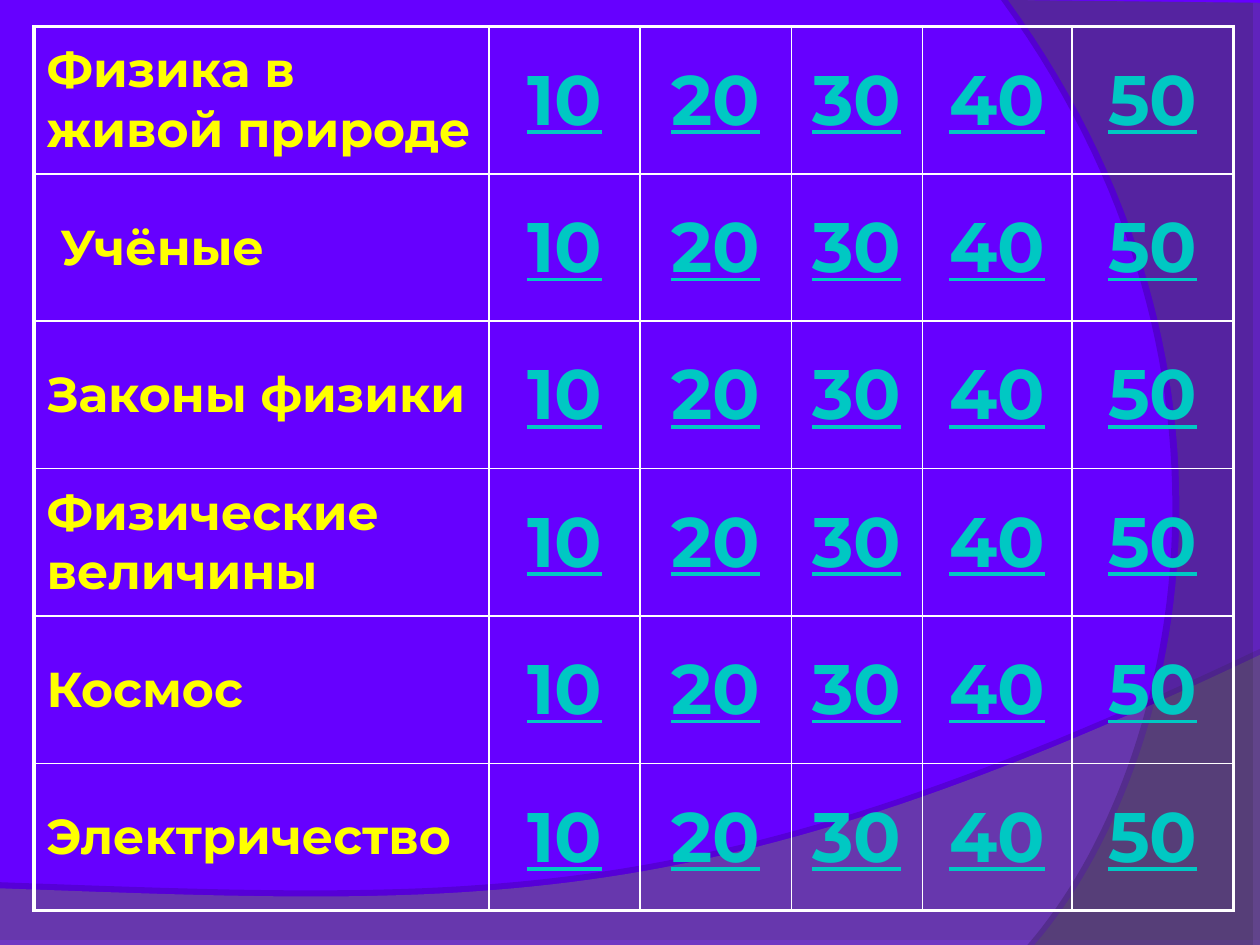
from lxml import etree
from pptx import Presentation
from pptx.dml.color import RGBColor
from pptx.enum.text import MSO_ANCHOR, PP_ALIGN
from pptx.oxml import parse_xml
from pptx.oxml.ns import nsdecls, qn
from pptx.util import Inches, Pt

MIDDLE = MSO_ANCHOR.MIDDLE
LEFT, CENTER = PP_ALIGN.LEFT, PP_ALIGN.CENTER
VIOLET = RGBColor(0x66, 0x00, 0xFF)
GREY = RGBColor(0x7C, 0x7C, 0x7C)
DARK = RGBColor(0x59, 0x59, 0x59)
YELLOW = RGBColor(0xFF, 0xFF, 0x00)
TEAL = RGBColor(0x00, 0xC8, 0xC3)
WHITE = RGBColor(0xFF, 0xFF, 0xFF)
FONT = "Montserrat"
THIN, THICK = Pt(1), Pt(2.25)
W, H = Inches(10), Inches(7.5)


def curve(a, b, c, d, steps=60):
    """Points along a cubic Bezier from a to d, without a itself."""
    points = []
    for i in range(1, steps + 1):
        t = i / steps
        u = 1 - t
        points.append([u**3 * p + 3 * u * u * t * q + 3 * u * t * t * r + t**3 * s
                       for p, q, r, s in zip(a, b, c, d)])
    return points


def edge(cell, side, width):
    """Add one solid white border to a cell."""
    line = etree.SubElement(cell._tc.get_or_add_tcPr(), qn("a:ln" + side), w=str(width))
    fill = etree.SubElement(line, qn("a:solidFill"))
    etree.SubElement(fill, qn("a:srgbClr"), val=str(WHITE))


prs = Presentation()
prs.slide_width, prs.slide_height = W, H
slide = prs.slides.add_slide(prs.slide_layouts[6])
back = slide.background.fill
back.solid()
back.fore_color.rgb = VIOLET

# Waves: points in percent of the slide, then colour, opacity,
# and the shadow's opacity, distance and angle
floor = [(0, 94), (0, 100.1), (100, 100.1), (100, 69.3)]
floor += curve(floor[-1], (55.9, 97.2), (39.1, 95.9), floor[0])
wall = [(100, 0.3), (100, 100), (82.1, 100)]
wall += curve(wall[-1], (93.5, 82.5), (101.8, 40), (80, 0))
waves = [
    (floor, GREY, 45, 35, 3.5, 270),
    (wall, DARK, 40, 45, 4, 180),
]
for points, color, alpha, shade, dist, angle in waves:
    spots = [(x * W / 100, y * H / 100) for x, y in points]
    pen = slide.shapes.build_freeform(*spots[0])
    pen.add_line_segments(spots[1:], close=True)
    wave = pen.convert_to_shape()
    wave.line.fill.background()
    wave.fill.solid()
    wave.fill.fore_color.rgb = color
    tint = wave._element.spPr.find(".//" + qn("a:srgbClr"))
    etree.SubElement(tint, qn("a:alpha"), val=str(alpha * 1000))
    wave._element.spPr.append(parse_xml(
        f'<a:effectLst {nsdecls("a")}><a:outerShdw blurRad="0" dist="{Pt(dist)}" '
        f'dir="{angle * 60000}" algn="ctr" rotWithShape="0"><a:srgbClr val="000000">'
        f'<a:alpha val="{shade * 1000}"/></a:srgbClr></a:outerShdw></a:effectLst>'))

# Question board
topics = ["Физика в живой природе", " Учёные", "Законы физики",
          "Физические величины", "Космос", "Электричество"]
scores = ["10", "20", "30", "40", "50"]
shares = [36.1, 12, 12, 10.4, 11.9, 12.8]
rows, cols = len(topics), len(shares)
high = round(H * 0.156)
frame = slide.shapes.add_table(rows, cols, round(W * 0.027), round(H * 0.028),
                               round(W * sum(shares) / 100), high * rows)
board = frame.table
board.first_row = board.horz_banding = False
for col, share in zip(board.columns, shares):
    col.width = round(W * share / 100)

for r, topic in enumerate(topics):
    board.rows[r].height = high
    for c, text in enumerate([topic] + scores):
        cell = board.cell(r, c)
        outer = {"L": c == 0, "R": c == cols - 1, "T": r == 0, "B": r == rows - 1}
        for side, rim in outer.items():
            edge(cell, side, THICK if rim else THIN)
        cell.fill.background()
        cell.vertical_anchor = MIDDLE
        para = cell.text_frame.paragraphs[0]
        para.alignment = CENTER if c else LEFT
        run = para.add_run()
        run.text = text
        font = run.font
        font.name, font.bold = FONT, True
        font.size = Pt(40 if c else 28)
        font.underline = c > 0
        font.color.rgb = TEAL if c else YELLOW

prs.save("out.pptx")
